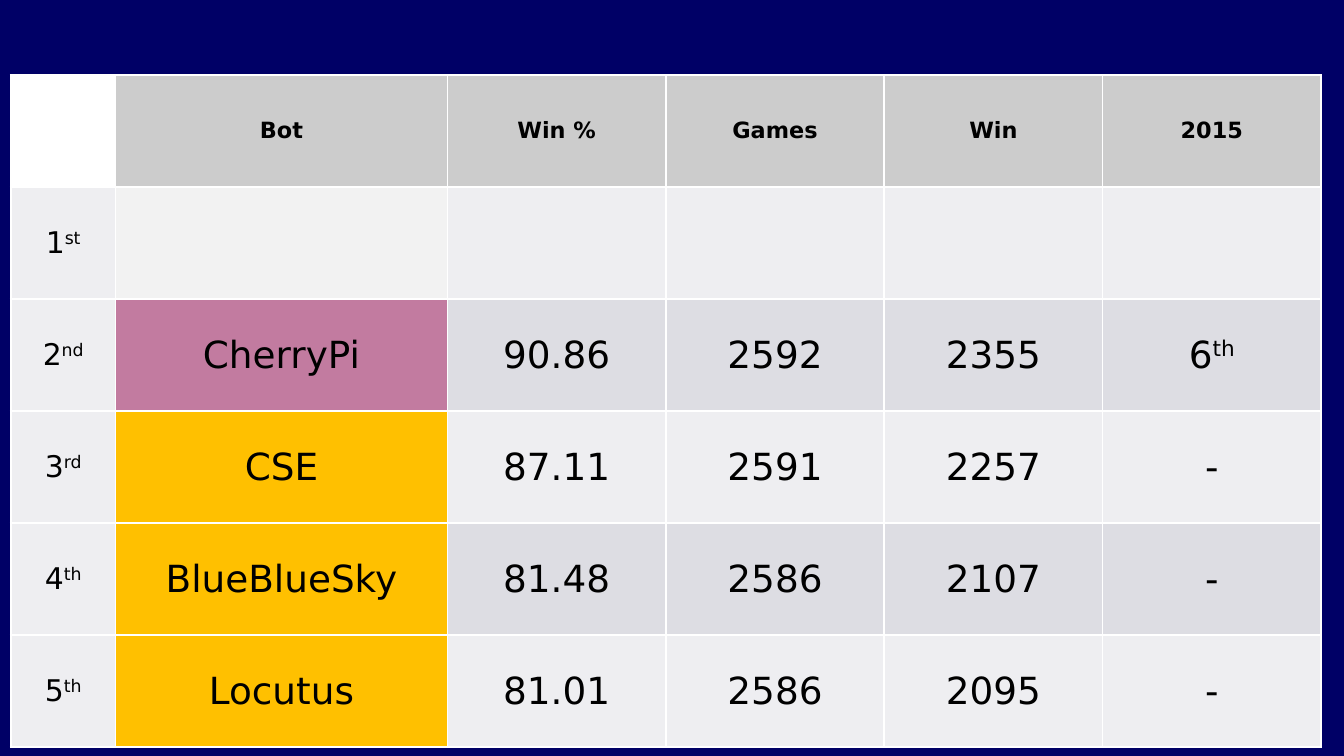
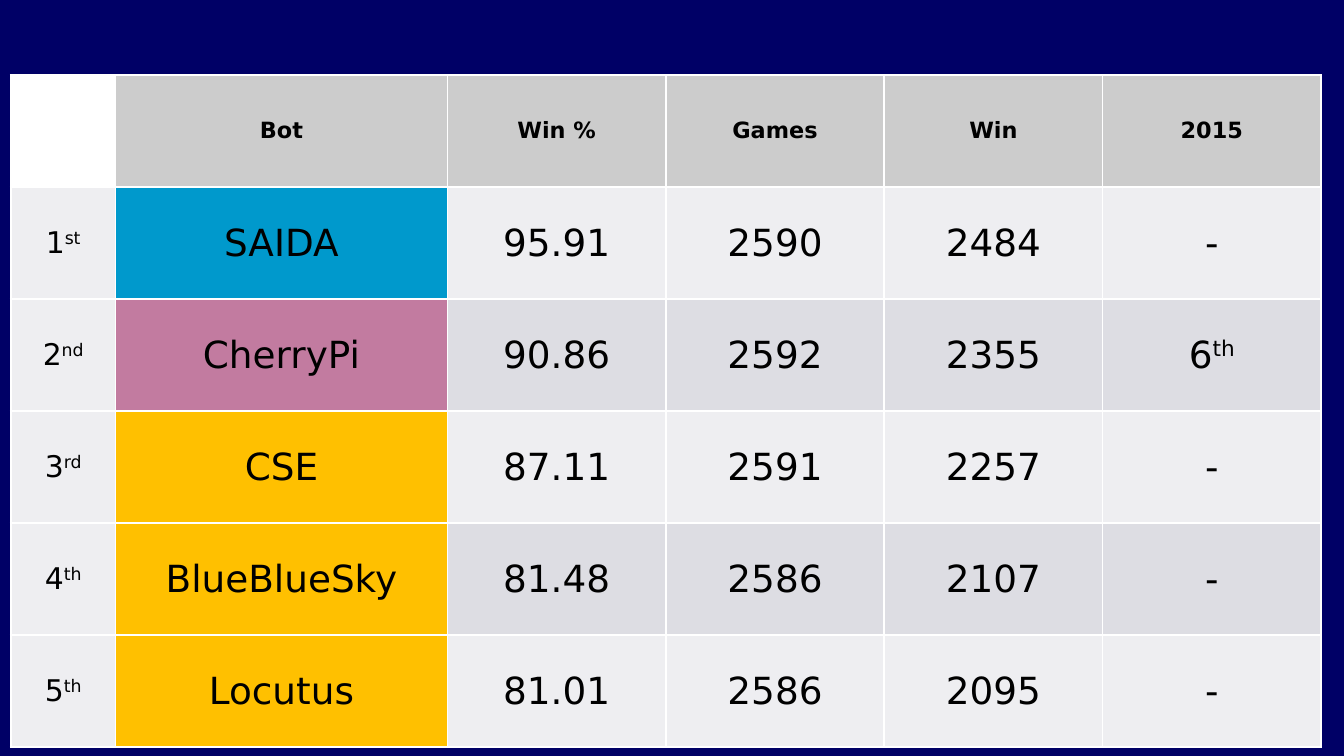
import dataclasses

import lxml.etree
import pptx
import pptx.dml.color
import pptx.enum.text
import pptx.oxml.ns
import pptx.util

Inches = pptx.util.Inches


@dataclasses.dataclass(frozen=True)
class Theme:
    back: str = "000066"
    ink: str = "000000"
    rule: str = "FFFFFF"
    corner: str = "FFFFFF"
    head: str = "CCCCCC"
    blank: str = "F2F2F2"
    light: str = "EEEEF1"
    dark: str = "DDDDE3"
    blue: str = "0099CC"
    pink: str = "C27BA0"
    gold: str = "FFC000"
    font: str = "DejaVu Sans"
    small: int = 12
    rank: int = 16
    body: int = 20


THEME = Theme()

# Wide slide, 16 to 9
SLIDE_W = 10
SLIDE_H = SLIDE_W * 9 / 16

# Table frame and the widths of its first two columns
LEFT, TOP, WIDTH, HEIGHT = 0.08, 0.56, 9.75, 5
RANK_W, BOT_W = 0.78, 2.47

# "^" starts the raised part of an ordinal
HEADS = ["", "Bot", "Win %", "Games", "Win", "2015"]
RANKS = ["1^st", "2^nd", "3^rd", "4^th", "5^th"]
BOTS = [
    (THEME.blue, ["SAIDA", "95.91", "2590", "2484", "-"]),
    (THEME.pink, ["CherryPi", "90.86", "2592", "2355", "6^th"]),
    (THEME.gold, ["CSE", "87.11", "2591", "2257", "-"]),
    (THEME.gold, ["BlueBlueSky", "81.48", "2586", "2107", "-"]),
    (THEME.gold, ["Locutus", "81.01", "2586", "2095", "-"]),
]
HIDDEN = (THEME.blank, [""] * 5)


def rgb(code):
    return pptx.dml.color.RGBColor.from_string(code)


def set_all(item, form):
    for name, value in form.items():
        setattr(item, name, value)


def add_run(para, text, size, bold, raised=False):
    run = para.add_run()
    run.text = text
    set_all(run.font, {"name": THEME.font, "size": pptx.util.Pt(size), "bold": bold})
    run.font.color.rgb = rgb(THEME.ink)
    if raised:
        run.font._element.set("baseline", "30000")


def add_rules(cell):
    """Draw a thin line on all four sides of a cell."""
    props = cell._tc.get_or_add_tcPr()
    qn = pptx.oxml.ns.qn
    for side in ("lnL", "lnR", "lnT", "lnB"):
        line = lxml.etree.SubElement(props, qn("a:" + side), w=str(pptx.util.Pt(1)))
        fill = lxml.etree.SubElement(line, qn("a:solidFill"))
        lxml.etree.SubElement(fill, qn("a:srgbClr"), val=THEME.rule)


def fill_cell(cell, text, fill, size, bold=False):
    add_rules(cell)
    cell.fill.solid()
    cell.fill.fore_color.rgb = rgb(fill)
    sides = ("margin_left", "margin_right", "margin_top", "margin_bottom")
    set_all(cell, dict.fromkeys(sides, 0))
    cell.vertical_anchor = pptx.enum.text.MSO_ANCHOR.MIDDLE
    para = cell.text_frame.paragraphs[0]
    para.alignment = pptx.enum.text.PP_ALIGN.CENTER
    base, _, tail = text.partition("^")
    if base:
        add_run(para, base, size, bold)
    if tail:
        add_run(para, tail, size, bold, raised=True)


def add_scores(slide, bots):
    """Add the ranking table: a head row, then one row for each bot."""
    rows, cols = len(bots) + 1, len(HEADS)
    frame = slide.shapes.add_table(
        rows, cols, Inches(LEFT), Inches(TOP), Inches(WIDTH), Inches(HEIGHT))
    table = frame.table

    # Sizes: the score columns share what the first two leave
    score_w = (WIDTH - RANK_W - BOT_W) / (cols - 2)
    for col, width in zip(table.columns, [RANK_W, BOT_W] + [score_w] * (cols - 2)):
        col.width = Inches(width)
    for row in table.rows:
        row.height = Inches(HEIGHT / rows)

    # Head row
    for col, text in enumerate(HEADS):
        fill = THEME.head if text else THEME.corner
        fill_cell(table.cell(0, col), text, fill, THEME.small, bold=True)

    # Rank, bot and scores, with banded score cells
    for row, (rank, (color, texts)) in enumerate(zip(RANKS, bots), 1):
        fill_cell(table.cell(row, 0), rank, THEME.light, THEME.rank)
        band = THEME.light if row % 2 else THEME.dark
        for col, text in enumerate(texts, 1):
            fill = color if col == 1 else band
            fill_cell(table.cell(row, col), text, fill, THEME.body)


def main():
    deck = pptx.Presentation()
    set_all(deck, {"slide_width": Inches(SLIDE_W), "slide_height": Inches(SLIDE_H)})
    ground = deck.slide_master.background.fill
    ground.solid()
    ground.fore_color.rgb = rgb(THEME.back)

    # The winner stays hidden on the first slide
    for bots in ([HIDDEN] + BOTS[1:], BOTS):
        slide = deck.slides.add_slide(deck.slide_layouts.get_by_name("Blank"))
        add_scores(slide, bots)

    deck.save("out.pptx")


if __name__ == "__main__":
    main()
